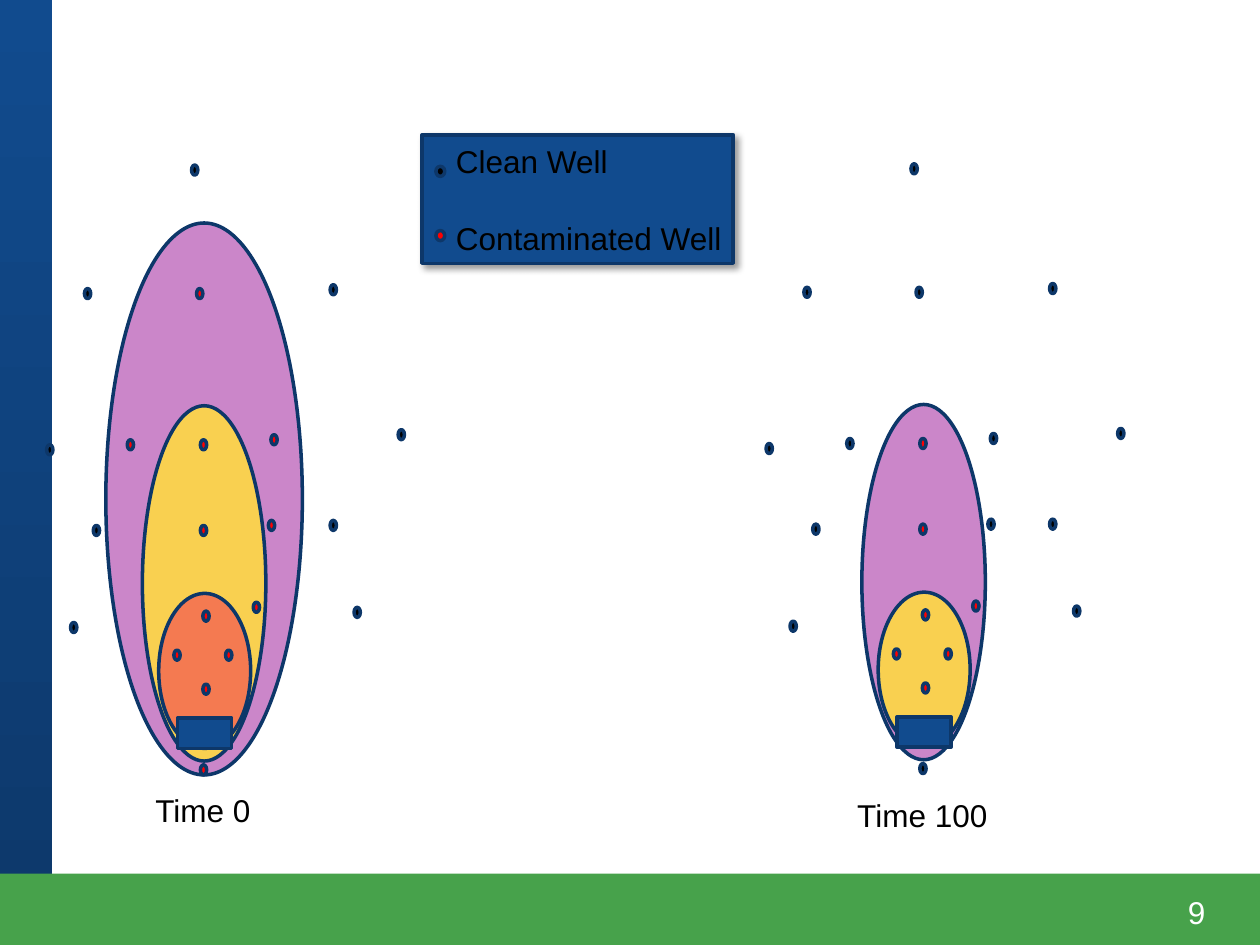
from lxml import etree
from pptx import Presentation
from pptx.dml.color import RGBColor
from pptx.enum.shapes import MSO_SHAPE as Shape
from pptx.enum.text import PP_ALIGN as Align
from pptx.oxml.ns import qn
from pptx.util import Pt

BLUE = RGBColor(0x11, 0x4B, 0x8E)
DEEP_BLUE = RGBColor(0x0D, 0x38, 0x6A)
OUTLINE = RGBColor(0x0D, 0x37, 0x69)
GREEN = RGBColor(0x47, 0xA2, 0x4B)
VIOLET = RGBColor(0xCB, 0x86, 0xC9)
YELLOW = RGBColor(0xF9, 0xD0, 0x50)
ORANGE = RGBColor(0xF4, 0x7A, 0x51)
RED = RGBColor(0xFF, 0x00, 0x00)
BLACK = RGBColor(0x00, 0x00, 0x00)
WHITE = RGBColor(0xFF, 0xFF, 0xFF)

FONT = {"name": "Arial", "size": Pt(18)}

OUTER = (33.84, 33.12, 112.32, 315.36)
MIDDLE = (54.72, 137.52, 70.56, 203.04)
INNER = (64.08, 244.8, 52.56, 88.56)
SOURCE = (74.88, 316.08, 30.96, 17.28)
WELL_SIZE = (3.6, 5.76)

CORE_WELLS = [
    (102.24, 277.2), (72.72, 277.2), (87.84, 156.96), (87.84, 205.92),
    (89.28, 254.88), (89.28, 296.64), (118.08, 249.84),
]
RECOVERED_WELLS = [
    (87.84, 342.72), (46.08, 156.96), (85.68, 70.56), (128.16, 154.08),
    (126.72, 203.04),
]
CLEAN_WELLS = [
    (162, 68.4), (21.6, 70.56), (0, 159.84), (200.88, 151.2),
    (26.64, 205.92), (162, 203.04), (175.68, 252.72), (13.68, 261.36),
    (82.8, 0),
]


def add_figure(page, kind, box, color, outlined=True):
    figure = page.shapes.add_shape(kind, *map(Pt, box))
    figure.shadow.inherit = False
    figure.fill.solid()
    figure.fill.fore_color.rgb = color
    if outlined:
        figure.line.color.rgb = OUTLINE
        figure.line.width = Pt(2)
    else:
        figure.line.fill.background()
    return figure


def add_text(page, box, lines, color=BLACK, align=Align.LEFT, gap=0):
    frame = page.shapes.add_textbox(*map(Pt, box)).text_frame
    frame.word_wrap = False
    for index, line in enumerate(lines):
        para = frame.add_paragraph() if index else frame.paragraphs[0]
        para.alignment = align
        if index:
            para.space_before = Pt(gap)
        span = para.add_run()
        span.text = line
        for name, value in FONT.items():
            setattr(span.font, name, value)
        span.font.color.rgb = color


def add_drop_shadow(figure):
    effects = figure._element.spPr.find(qn("a:effectLst"))
    shadow = etree.SubElement(
        effects, qn("a:outerShdw"), blurRad=str(Pt(4)), dist=str(Pt(3)),
        dir=str(45 * 60000), algn="tl", rotWithShape="0")
    tint = etree.SubElement(shadow, qn("a:srgbClr"), val=str(BLACK))
    etree.SubElement(tint, qn("a:alpha"), val="40000")


def draw_frame(page, width, height):
    side = add_figure(page, Shape.RECTANGLE, (0, 0, 30, height), BLUE, False)
    side.fill.gradient()
    side.fill.gradient_angle = 270
    for stop, color in zip(side.fill.gradient_stops, (BLUE, DEEP_BLUE)):
        stop.color.rgb = color
    footer_top = 499.2
    footer = (0, footer_top, width, height - footer_top)
    add_figure(page, Shape.RECTANGLE, footer, GREEN, False)
    add_text(page, (671.76, 506.88, 41.76, 27.36), ["9"], WHITE)


def draw_legend(page, box):
    left, top, width, height = box
    add_drop_shadow(add_figure(page, Shape.RECTANGLE, box, BLUE))
    for drop, color in ((18, BLACK), (54.72, RED)):
        marker = (left + 7.92, top + drop, 5.04, 5.76)
        add_figure(page, Shape.OVAL, marker, color)
    add_text(page, (left + 12.24, top + 0.72, 167.76, 72.72),
             ["Clean Well", "Contaminated Well"], gap=22)


def draw_site(page, origin, plumes, well_groups, caption, caption_box):
    left, top = origin

    def place(kind, box, color):
        x, y, width, height = box
        add_figure(page, kind, (left + x, top + y, width, height), color)

    for plume, color in plumes:
        place(Shape.OVAL, plume, color)
    place(Shape.RECTANGLE, SOURCE, BLUE)
    for wells, color in well_groups:
        for well in wells:
            place(Shape.OVAL, well + WELL_SIZE, color)
    x, y, width, height = caption_box
    add_text(page, (left + x, top + y, width, height), [caption],
             align=Align.CENTER)


def main():
    deck = Presentation()
    deck.slide_width, deck.slide_height = Pt(720), Pt(540)
    page = deck.slides.add_slide(deck.slide_layouts[6])
    draw_frame(page, 720, 540)
    draw_legend(page, (241.2, 77.04, 177.84, 73.44))
    draw_site(page, (26.64, 94.32),
              [(OUTER, VIOLET), (MIDDLE, YELLOW), (INNER, ORANGE)],
              [(CORE_WELLS + RECOVERED_WELLS, RED), (CLEAN_WELLS, BLACK)],
              "Time 0", (54.72, 354.24, 69.12, 28.8))
    draw_site(page, (437.76, 93.6),
              [(MIDDLE, VIOLET), (INNER, YELLOW)],
              [(CORE_WELLS, RED), (RECOVERED_WELLS + CLEAN_WELLS, BLACK)],
              "Time 100", (44.64, 357.84, 89.28, 28.8))
    deck.save("out.pptx")


if __name__ == "__main__":
    main()
